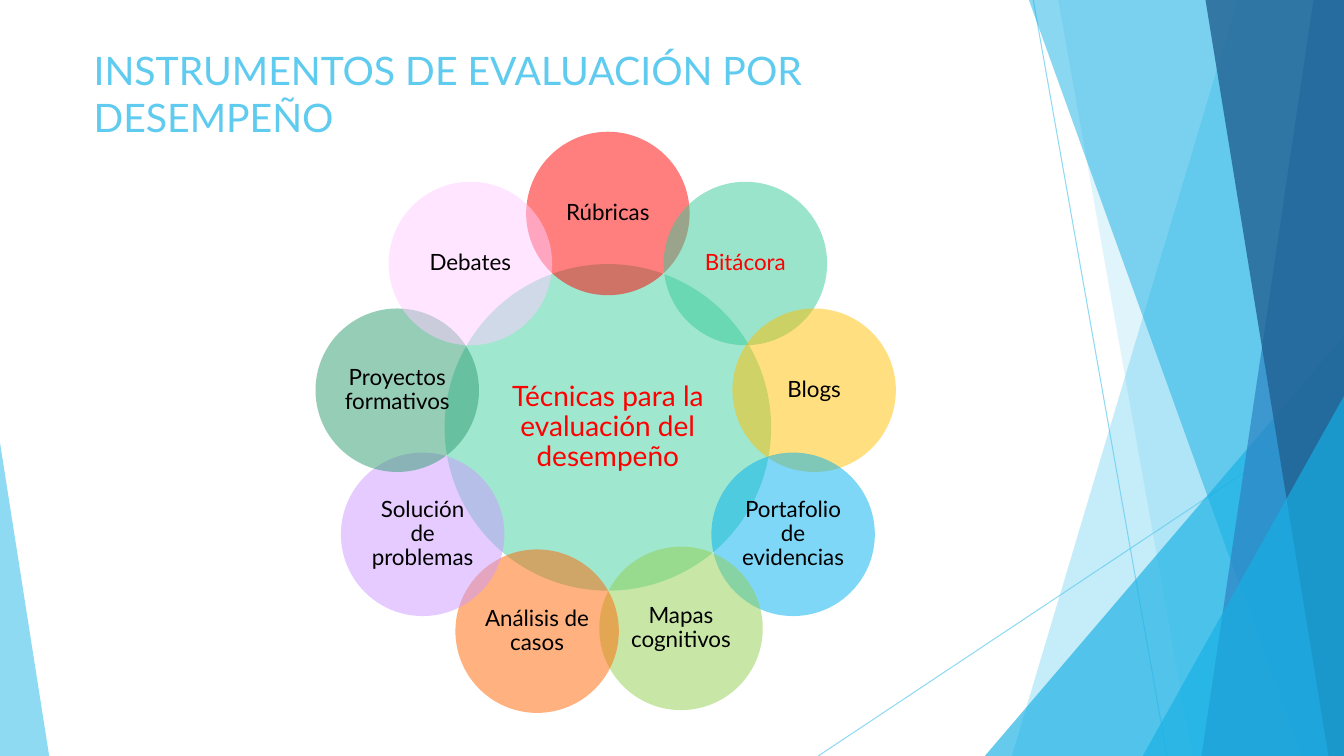
from dataclasses import dataclass
from math import cos, radians, sin

from lxml import etree
from pptx import Presentation
from pptx.dml.color import RGBColor
from pptx.enum.shapes import MSO_CONNECTOR, MSO_SHAPE
from pptx.enum.text import MSO_ANCHOR, PP_ALIGN
from pptx.oxml.ns import qn
from pptx.util import Cm, Pt

OVAL, TRIANGLE = MSO_SHAPE.OVAL, MSO_SHAPE.ISOSCELES_TRIANGLE
STRAIGHT = MSO_CONNECTOR.STRAIGHT
TOP, MIDDLE = MSO_ANCHOR.TOP, MSO_ANCHOR.MIDDLE
LEFT, CENTER = PP_ALIGN.LEFT, PP_ALIGN.CENTER
WIDTH, HEIGHT = 33.87, 19.05


@dataclass(frozen=True)
class Theme:
    font: str = "Lato"
    title_size: int = 28
    hub_size: int = 20
    petal_size: int = 16
    sky: str = "5FCBEF"
    cyan: str = "17B0E4"
    blue: str = "2E83C3"
    navy: str = "226292"
    hub: str = "42D0A2"
    red: str = "FF0000"
    black: str = "000000"
    mint: str = "36CA98"
    amber: str = "FFC000"
    azure: str = "00B0F0"
    lime: str = "92D050"
    orange: str = "FF6600"
    lilac: str = "CC99FF"
    green: str = "2F9C71"
    pink: str = "FFCCFF"


class SlideBuilder:
    """Draws on one slide; all lengths are centimetres."""

    def __init__(self, slide, theme):
        self.shapes = slide.shapes
        self.theme = theme

    def paint(self, fill, color, opacity):
        fill.solid()
        fill.fore_color.rgb = RGBColor.from_string(color)
        for rgb in fill._xPr.iter(qn("a:srgbClr")):
            etree.SubElement(rgb, qn("a:alpha"), val=str(opacity * 1000))

    def finish(self, shape, color, opacity):
        shape.shadow.inherit = False
        shape.line.fill.background()
        self.paint(shape.fill, color, opacity)

    def ray(self, x1, y1, x2, y2):
        ray = self.shapes.add_connector(STRAIGHT, Cm(x1), Cm(y1), Cm(x2), Cm(y2))
        ray.line.width = Pt(0.75)
        self.paint(ray.line.fill, self.theme.sky, 70)
        etree.SubElement(ray._element.spPr, qn("a:effectLst"))

    def facet(self, top_x, bottom_x, color, opacity):
        """Band from a slanted left edge to the right edge of the slide."""
        outline = self.shapes.build_freeform(Cm(top_x), 0, scale=1.0)
        corners = [(WIDTH, 0), (WIDTH, HEIGHT), (bottom_x, HEIGHT)]
        outline.add_line_segments([(Cm(x), Cm(y)) for x, y in corners], close=True)
        self.finish(outline.convert_to_shape(), color, opacity)

    def corner(self, left, top, width, apex, color, opacity):
        """Triangle standing on the bottom edge of the slide."""
        corner = self.shapes.add_shape(
            TRIANGLE, Cm(left), Cm(top), Cm(width), Cm(HEIGHT - top))
        corner.adjustments[0] = apex
        self.finish(corner, color, opacity)

    def label(self, frame, text, size, color, align, anchor, spacing):
        frame.word_wrap = True
        frame.vertical_anchor = anchor
        paragraph = frame.paragraphs[0]
        paragraph.alignment = align
        paragraph.line_spacing = spacing
        run = paragraph.add_run()
        run.text = text
        run.font.name = self.theme.font
        run.font.size = Pt(size)
        run.font.color.rgb = RGBColor.from_string(color)

    def title(self, text, left, top, width, height):
        box = self.shapes.add_textbox(Cm(left), Cm(top), Cm(width), Cm(height))
        self.label(box.text_frame, text, self.theme.title_size, self.theme.sky,
                   LEFT, TOP, 1.0)

    def circle(self, text, x, y, diameter, color, size, text_color, inset):
        circle = self.shapes.add_shape(
            OVAL, Cm(x - diameter / 2), Cm(y - diameter / 2), Cm(diameter), Cm(diameter))
        self.finish(circle, color, 50)
        frame = circle.text_frame
        frame.margin_left = frame.margin_right = Cm(inset)
        frame.margin_top = frame.margin_bottom = Cm(inset)
        self.label(frame, text, size, text_color, CENTER, MIDDLE, 0.9)


def draw_backdrop(page, theme):
    page.ray(26.04, 0, 29.41, HEIGHT)
    page.ray(WIDTH, 10.24, 20.62, HEIGHT)
    page.facet(31.19, 25.5, theme.sky, 36)
    page.facet(26.67, 30.05, theme.sky, 20)
    page.corner(24.82, 8.46, WIDTH - 24.82, 1, theme.cyan, 66)
    page.facet(25.93, 32.79, theme.cyan, 50)
    page.facet(33.1, 30.28, theme.blue, 70)
    page.facet(30.38, 33.48, theme.navy, 80)
    page.corner(28.8, 9.98, WIDTH - 28.8, 1, theme.cyan, 66)
    page.corner(0, 11.15, 1.24, 0, theme.sky, 70)


def draw_flower(page, theme):
    center_x, center_y, radius = 15.32, 10.77, 5.39
    page.circle("Técnicas para la evaluación del desempeño", center_x, center_y,
                8.23, theme.hub, theme.hub_size, theme.red, 0.08)
    # Clockwise from the top: text, fill, text colour, offset from the ring
    petals = [
        ("Rúbricas", theme.red, theme.black, (0, 0)),
        ("Bitácora", theme.mint, theme.red, (0, 0)),
        ("Blogs", theme.amber, theme.black, (-0.11, 0)),
        ("Portafolio de evidencias", theme.azure, theme.black, (0, 0)),
        ("Mapas cognitivos", theme.lime, theme.black, (0, 0)),
        ("Análisis de casos", theme.orange, theme.black, (0.06, 0.07)),
        ("Solución de problemas", theme.lilac, theme.black, (0, 0)),
        ("Proyectos formativos", theme.green, theme.black, (0, 0)),
        ("Debates", theme.pink, theme.black, (0, 0)),
    ]
    for index, (text, color, text_color, (dx, dy)) in enumerate(petals):
        angle = radians(360 / len(petals) * index)
        page.circle(text, center_x + radius * sin(angle) + dx,
                    center_y - radius * cos(angle) + dy,
                    4.12, color, theme.petal_size, text_color, 0.05)


def main():
    deck = Presentation()
    deck.slide_width, deck.slide_height = Cm(WIDTH), Cm(HEIGHT)
    theme = Theme()
    page = SlideBuilder(deck.slides.add_slide(deck.slide_layouts[6]), theme)

    # Faceted backdrop
    draw_backdrop(page, theme)
    # Heading
    page.title("INSTRUMENTOS DE EVALUACIÓN POR DESEMPEÑO", 2.11, 1.04, 23.88, 1.78)
    # Hub with its ring of instruments
    draw_flower(page, theme)

    deck.save("out.pptx")


if __name__ == "__main__":
    main()
